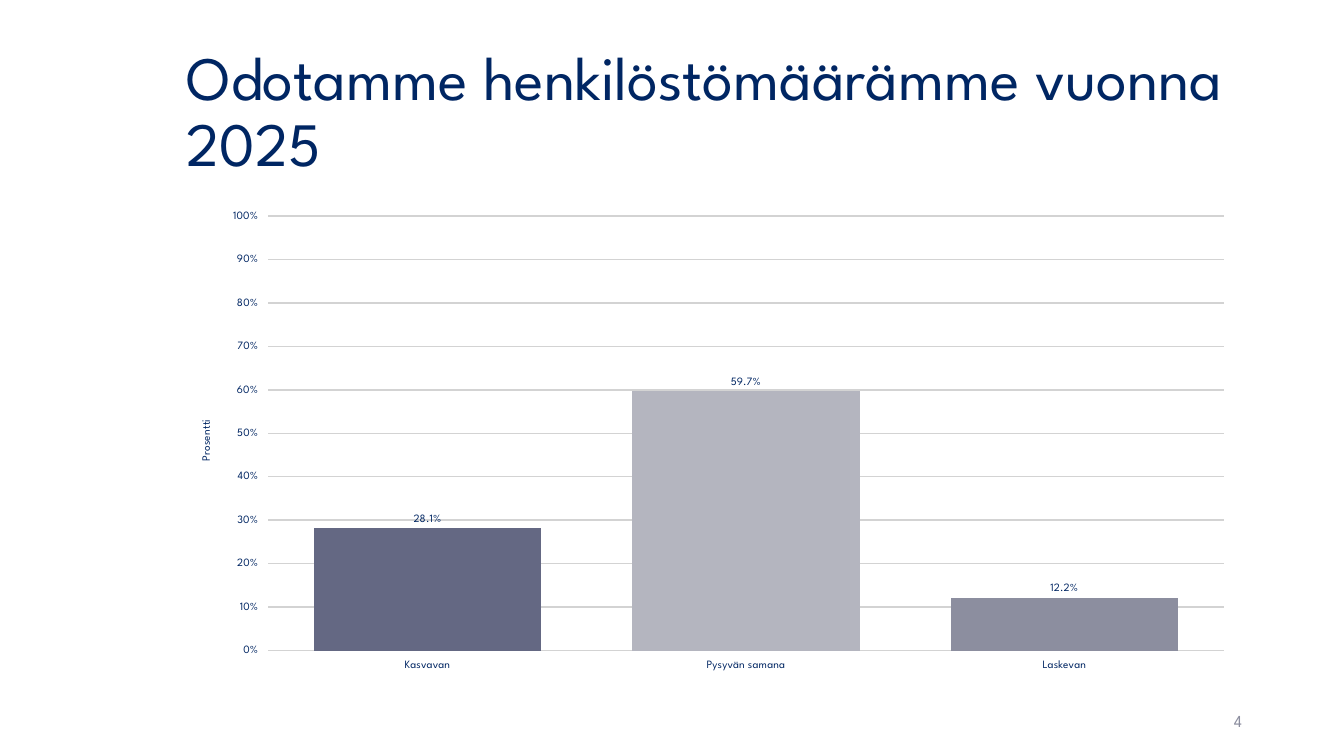
from dataclasses import dataclass

from lxml.etree import SubElement
from pptx import Presentation
from pptx.chart.chart import Chart
from pptx.chart.data import CategoryChartData
from pptx.dml.color import RGBColor
from pptx.enum.chart import XL_CHART_TYPE as ChartType
from pptx.enum.chart import XL_LABEL_POSITION as LabelPosition
from pptx.enum.chart import XL_TICK_MARK as TickMark
from pptx.enum.text import MSO_ANCHOR as Anchor
from pptx.enum.text import MSO_AUTO_SIZE as AutoSize
from pptx.enum.text import PP_ALIGN as Align
from pptx.oxml.ns import qn
from pptx.slide import Slide
from pptx.util import Cm, Pt


@dataclass(frozen=True)
class Theme:
    font: str = "League Spartan"
    navy: str = "002663"
    muted: str = "8C8E9F"
    grid: str = "D3D3D3"
    title_size: int = 44
    number_size: int = 12
    chart_size: int = 18
    label_size: int = 8


@dataclass(frozen=True)
class Frame:
    left: float
    top: float
    width: float
    height: float

    def lengths(self) -> tuple[Cm, Cm, Cm, Cm]:
        return Cm(self.left), Cm(self.top), Cm(self.width), Cm(self.height)


@dataclass(frozen=True)
class Bar:
    category: str
    share: float
    color: str


THEME = Theme()
TITLE_FRAME = Frame(4.45, 1.02, 26.9, 3.68)
CHART_FRAME = Frame(4.45, 5.08, 26.9, 12.09)
NUMBER_FRAME = Frame(23.93, 17.65, 7.62, 1.02)
BARS = [
    Bar("Kasvavan", 0.281, "646883"),
    Bar("Pysyvän samana", 0.597, "B4B5BF"),
    Bar("Laskevan", 0.122, THEME.muted),
]


def style_font(font, size: int, color: str) -> None:
    font.name = THEME.font
    font.size = Pt(size)
    font.bold = False
    font.color.rgb = RGBColor.from_string(color)


def fill_text(box, text: str, size: int, color: str, align: Align):
    frame = box.text_frame
    frame.word_wrap = True
    frame.auto_size = AutoSize.NONE
    frame.vertical_anchor = Anchor.MIDDLE
    para = frame.paragraphs[0]
    para.text = text
    para.alignment = align
    style_font(para.font, size, color)
    return para


def add_title(page: Slide, text: str) -> None:
    title = page.shapes.title
    title.left, title.top, title.width, title.height = TITLE_FRAME.lengths()
    para = fill_text(title, text, THEME.title_size, THEME.navy, Align.LEFT)
    para.line_spacing = 0.9


def add_page_number(page: Slide, text: str) -> None:
    box = page.shapes.add_textbox(*NUMBER_FRAME.lengths())
    para = fill_text(box, text, THEME.number_size, THEME.muted, Align.RIGHT)
    para.space_after = Pt(6)


def place(parent, settings: dict[str, str | float]) -> None:
    """Fix the position of a chart part, as fractions of the chart."""
    layout = parent.find(qn("c:layout"))
    if layout is None:
        layout = SubElement(parent, qn("c:layout"))
        anchor = parent.find(qn("c:tx"))
        if anchor is not None:
            anchor.addnext(layout)
        else:
            parent.insert(0, layout)
    manual = SubElement(layout, qn("c:manualLayout"))
    for name, value in settings.items():
        SubElement(manual, qn(f"c:{name}")).set("val", str(value))


def style_axes(chart: Chart) -> None:
    for axis in (chart.category_axis, chart.value_axis):
        axis.major_tick_mark = TickMark.OUTSIDE
        axis.format.line.fill.background()
        style_font(axis.tick_labels.font, THEME.label_size, THEME.navy)

    values = chart.value_axis
    values.minimum_scale, values.maximum_scale = 0, 1
    values.major_unit = 0.1
    values.tick_labels.number_format = "0%"
    values.tick_labels.number_format_is_linked = False
    grid_line = values.major_gridlines.format.line
    grid_line.width = Pt(1)
    grid_line.color.rgb = RGBColor.from_string(THEME.grid)

    para = values.axis_title.text_frame.paragraphs[0]
    para.text = "Prosentti"
    style_font(para.font, THEME.label_size, THEME.navy)
    place(values.axis_title._element,
          {"xMode": "edge", "yMode": "edge", "x": 0.02, "y": 0.45})


def add_bar_chart(page: Slide, bars: list[Bar]) -> None:
    data = CategoryChartData(number_format="0.0%")
    data.categories = [bar.category for bar in bars]
    data.add_series("Series 1", [bar.share for bar in bars])
    chart = page.shapes.add_chart(
        ChartType.COLUMN_CLUSTERED, *CHART_FRAME.lengths(), data).chart
    chart.has_title = False
    chart.has_legend = False
    style_font(chart.font, THEME.chart_size, THEME.navy)
    style_axes(chart)

    # Bars and their colours
    plot = chart.plots[0]
    plot.gap_width, plot.overlap = 40, -2
    plot.vary_by_categories = False
    for index, bar in enumerate(bars):
        fill = plot.series[0].points[index].format.fill
        fill.solid()
        fill.fore_color.rgb = RGBColor.from_string(bar.color)

    # Value labels
    labels = plot.series[0].data_labels
    labels.show_value = True
    labels.number_format = "0.0%"
    labels.number_format_is_linked = False
    labels.position = LabelPosition.OUTSIDE_END
    style_font(labels.font, THEME.label_size, THEME.navy)

    # Plot area
    place(chart._chartSpace.chart.plotArea,
          {"layoutTarget": "inner", "xMode": "edge", "yMode": "edge",
           "x": 0.086, "y": 0.03, "w": 0.895, "h": 0.906})


def main() -> None:
    deck = Presentation()
    deck.slide_width, deck.slide_height = Cm(33.87), Cm(19.05)
    page = deck.slides.add_slide(deck.slide_layouts[5])
    add_title(page, "Odotamme henkilöstömäärämme vuonna 2025")
    add_bar_chart(page, BARS)
    add_page_number(page, "4")
    deck.save("out.pptx")


if __name__ == "__main__":
    main()
